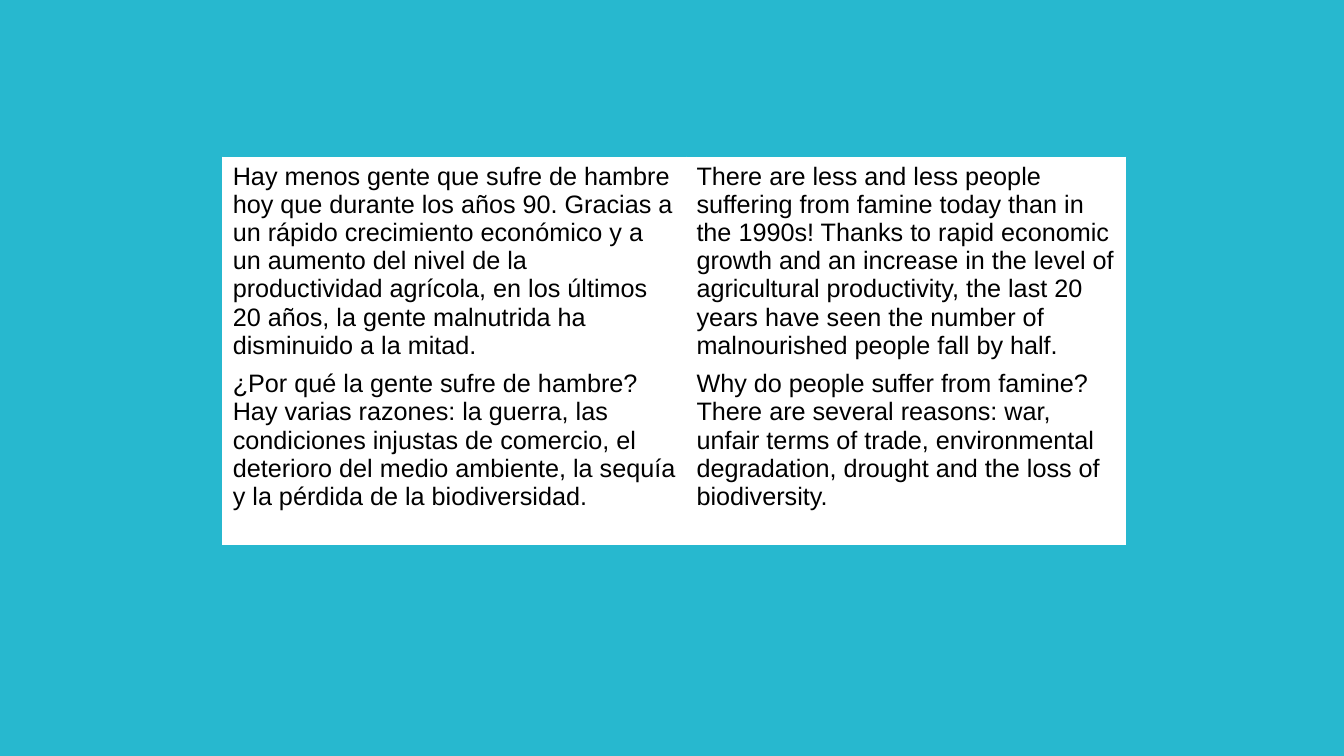
from pptx import Presentation
from pptx.dml.color import RGBColor
from pptx.util import Pt

TEAL = RGBColor(0x27, 0xB8, 0xCF)
WHITE = RGBColor(0xFF, 0xFF, 0xFF)
BLACK = RGBColor(0x00, 0x00, 0x00)

FONT_FORMAT = {"name": "Arial", "size": Pt(18), "bold": False}
CELL_FORMAT = {
    "margin_left": Pt(7.2),
    "margin_right": Pt(7.2),
    "margin_top": Pt(3.6),
    "margin_bottom": Pt(3.6),
}
PLAIN_TABLE = {"first_row": False, "horz_banding": False}

TRANSLATIONS = [
    (
        "Hay menos gente que sufre de hambre hoy que durante los años 90. "
        "Gracias a un rápido crecimiento económico y a un aumento del nivel "
        "de la productividad agrícola, en los últimos 20 años, la gente "
        "malnutrida ha disminuido a la mitad.",
        "There are less and less people suffering from famine today than in "
        "the 1990s! Thanks to rapid economic growth and an increase in the "
        "level of agricultural productivity, the last 20 years have seen the "
        "number of malnourished people fall by half.",
    ),
    (
        "¿Por qué la gente sufre de hambre? Hay varias razones: la guerra, "
        "las condiciones injustas de comercio, el deterioro del medio "
        "ambiente, la sequía y la pérdida de la biodiversidad.",
        "Why do people suffer from famine? There are several reasons: war, "
        "unfair terms of trade, environmental degradation, drought and the "
        "loss of biodiversity.",
    ),
]
LANGUAGE_WIDTHS = (331.2, 313.9)
PASSAGE_HEIGHTS = (148, 128.5)


def apply_format(target, values):
    for attribute, value in values.items():
        setattr(target, attribute, value)


def fill_passage(cell, passage):
    apply_format(cell, CELL_FORMAT)
    cell.fill.solid()
    cell.fill.fore_color.rgb = WHITE
    paragraph = cell.text_frame.paragraphs[0]
    run = paragraph.add_run()
    run.text = passage
    apply_format(run.font, FONT_FORMAT)
    run.font.color.rgb = BLACK


def add_translations(slide, left, top, widths, heights):
    frame = slide.shapes.add_table(
        len(heights), len(widths),
        Pt(left), Pt(top), Pt(sum(widths)), Pt(sum(heights)),
    )
    translations = frame.table
    apply_format(translations, PLAIN_TABLE)
    for column, width in zip(translations.columns, widths):
        column.width = Pt(width)
    for row, height, passages in zip(translations.rows, heights, TRANSLATIONS):
        row.height = Pt(height)
        for cell, passage in zip(row.cells, passages):
            fill_passage(cell, passage)


def add_reading_slide(presentation):
    slide = presentation.slides.add_slide(presentation.slide_layouts[6])
    background = slide.background.fill
    background.solid()
    background.fore_color.rgb = TEAL
    add_translations(slide, 159.1, 112.3, LANGUAGE_WIDTHS, PASSAGE_HEIGHTS)


def main():
    presentation = Presentation()
    presentation.slide_width = Pt(960)
    presentation.slide_height = Pt(540)
    add_reading_slide(presentation)
    presentation.save("out.pptx")


if __name__ == "__main__":
    main()
